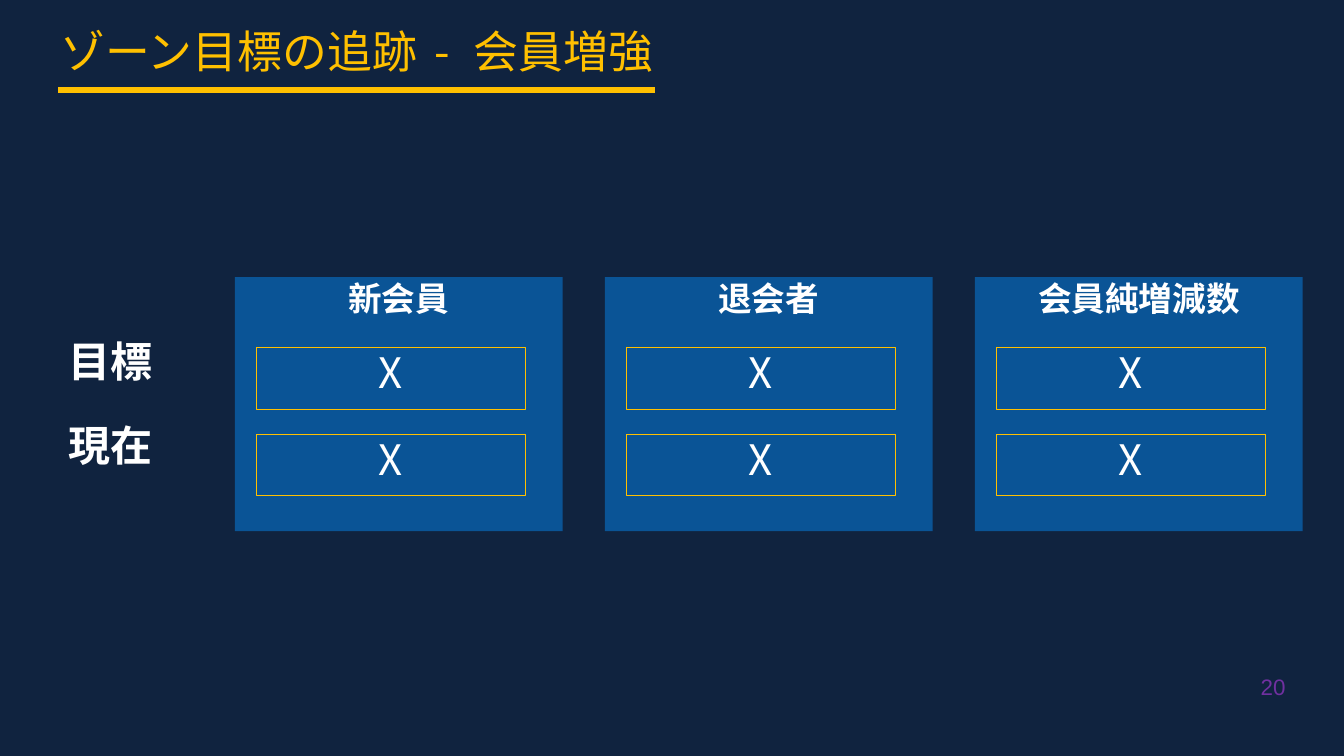
from lxml.etree import SubElement
from pptx import Presentation
from pptx.dml.color import RGBColor
from pptx.enum.shapes import MSO_CONNECTOR, MSO_SHAPE
from pptx.enum.text import MSO_ANCHOR, PP_ALIGN
from pptx.oxml.ns import qn
from pptx.util import Inches, Pt

TITLE_PARTS = [("ゾーン目標の追跡", 0), (" - ", 5), ("会員増強", 0)]
ROW_LABELS = ["目標", "現在"]
CARDS = [("新会員", ["X", "X"]), ("退会者", ["X", "X"]), ("会員純増減数", ["X", "X"])]
PAGE_NUMBER = "20"

NAVY = RGBColor(0x10, 0x23, 0x3F)
BLUE = RGBColor(0x0A, 0x54, 0x96)
GOLD = RGBColor(0xFF, 0xC0, 0x00)
WHITE = RGBColor(0xFF, 0xFF, 0xFF)
PURPLE = RGBColor(0x70, 0x30, 0xA0)
JAPANESE_FONT = "Noto Sans CJK JP"

CARD_LEFT, CARD_TOP, CARD_WIDTH, CARD_HEIGHT = 2.33, 2.75, 3.25, 2.52
CARD_PITCH = 3.67
VALUE_INSET, VALUE_TOP, VALUE_WIDTH, VALUE_HEIGHT = 0.21, 3.45, 2.67, 0.61
VALUE_PITCH = 0.86
LABEL_LEFT, LABEL_TOP, LABEL_WIDTH, LABEL_PITCH = 0.58, 3.34, 1.75, 0.83


def write_text(shape, parts, size, color, bold=False, align=PP_ALIGN.LEFT,
               font_name=JAPANESE_FONT, anchor=MSO_ANCHOR.TOP, line_spacing=0.9):
    """Write (text, letter spacing) parts as runs of one paragraph."""
    frame = shape.text_frame
    frame.word_wrap = True
    frame.vertical_anchor = anchor
    paragraph = frame.paragraphs[0]
    paragraph.alignment = align
    paragraph.line_spacing = line_spacing
    for text, letter_spacing in parts:
        run = paragraph.add_run()
        run.text = text
        run.font.name = font_name
        run.font.size = Pt(size)
        run.font.bold = bold
        run.font.color.rgb = color
        properties = run.font._element
        SubElement(properties, qn("a:ea")).set("typeface", font_name)
        if letter_spacing:
            properties.set("spc", str(letter_spacing * 100))


def add_title(slide):
    """Place the title and its underline."""
    title = slide.shapes.title
    title.left, title.top = Inches(0.5), Inches(0.25)
    title.width, title.height = Inches(7.67), Inches(0.64)
    write_text(title, TITLE_PARTS, 32, GOLD)
    underline = slide.shapes.add_connector(
        MSO_CONNECTOR.STRAIGHT, Inches(0.58), Inches(0.89), Inches(6.5), Inches(0.89))
    underline.line.color.rgb = GOLD
    underline.line.width = Pt(4.5)
    SubElement(underline._element.spPr, qn("a:effectLst"))


def add_box(shapes, left, top, width, height, fill=None, line=None):
    """Add a rectangle with an optional fill and outline."""
    box = shapes.add_shape(
        MSO_SHAPE.RECTANGLE, Inches(left), Inches(top), Inches(width), Inches(height))
    box.shadow.inherit = False
    if fill is None:
        box.fill.background()
    else:
        box.fill.solid()
        box.fill.fore_color.rgb = fill
    if line is None:
        box.line.fill.background()
    else:
        box.line.color.rgb = line
        box.line.width = Pt(0.75)
    return box


def add_card(slide, index, heading, values):
    """Group one blue card with its outlined values."""
    group = slide.shapes.add_group_shape()
    left = CARD_LEFT + index * CARD_PITCH
    card = add_box(group.shapes, left, CARD_TOP, CARD_WIDTH, CARD_HEIGHT, fill=BLUE)
    write_text(card, [(heading, 0)], 24, WHITE, bold=True, align=PP_ALIGN.CENTER)
    for row, value in enumerate(values):
        box = add_box(group.shapes, left + VALUE_INSET, VALUE_TOP + row * VALUE_PITCH,
                      VALUE_WIDTH, VALUE_HEIGHT, line=GOLD)
        write_text(box, [(value, 0)], 30, WHITE, align=PP_ALIGN.CENTER)


def main():
    """Build and save the zone goal slide."""
    presentation = Presentation()
    presentation.slide_width, presentation.slide_height = Inches(13.33), Inches(7.5)
    slide = presentation.slides.add_slide(presentation.slide_layouts[5])
    slide.background.fill.solid()
    slide.background.fill.fore_color.rgb = NAVY

    number = slide.shapes.add_textbox(
        Inches(12.14), Inches(6.63), Inches(0.61), Inches(0.37))
    number.text_frame.margin_left = number.text_frame.margin_right = 0
    write_text(number, [(PAGE_NUMBER, 0)], 16, PURPLE, align=PP_ALIGN.RIGHT,
               font_name="Arial", anchor=MSO_ANCHOR.MIDDLE, line_spacing=1.0)

    add_title(slide)
    for row, text in enumerate(ROW_LABELS):
        label = slide.shapes.add_textbox(
            Inches(LABEL_LEFT), Inches(LABEL_TOP + row * LABEL_PITCH),
            Inches(LABEL_WIDTH), Inches(VALUE_HEIGHT))
        write_text(label, [(text, 0)], 30, WHITE, bold=True)
    for index, (heading, values) in enumerate(CARDS):
        add_card(slide, index, heading, values)

    presentation.save("out.pptx")


if __name__ == "__main__":
    main()
